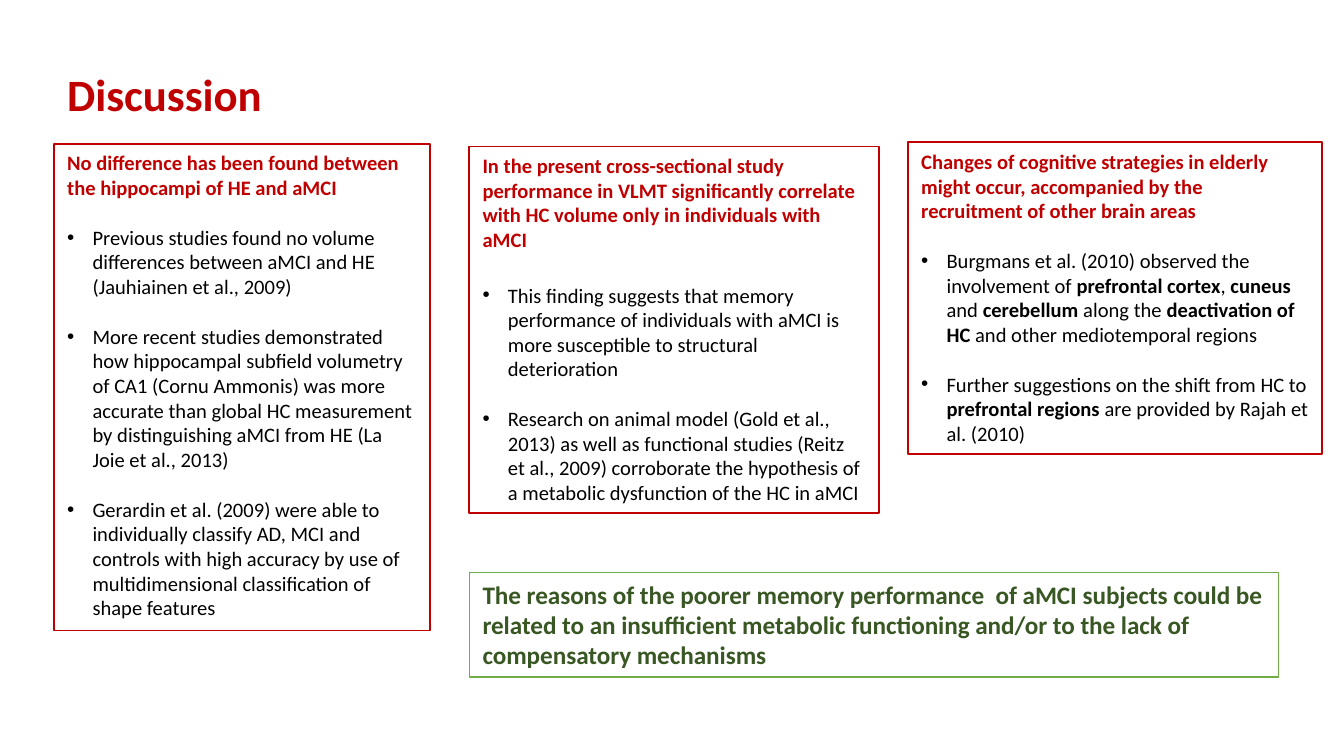
"""Build the discussion slide: three framed columns and a conclusion."""
from lxml.etree import SubElement
from pptx import Presentation
from pptx.dml.color import RGBColor
from pptx.enum.shapes import MSO_SHAPE
from pptx.enum.text import MSO_ANCHOR, PP_ALIGN
from pptx.oxml.ns import qn
from pptx.util import Cm, Pt

COLORS = {
    "red": "C00000",
    "black": "000000",
    "white": "FFFFFF",
    "green": "70AD47",
    "dark": "385723",
}

COLUMNS = [
    {
        "place": (1.02, 2.72, 7.11, 9.2),
        "head": "No difference has been found between the hippocampi of HE and aMCI",
        "gaps": (13.4, 13.4, 13.4),
        "points": [
            "Previous studies found no volume differences between aMCI and HE "
            "(Jauhiainen et al., 2009)",
            "More recent studies demonstrated how hippocampal subfield volumetry of CA1 "
            "(Cornu Ammonis) was more accurate than global HC measurement by "
            "distinguishing aMCI from HE (La Joie et al., 2013)",
            "Gerardin et al. (2009) were able to individually classify AD, MCI and "
            "controls with high accuracy by use of multidimensional classification of "
            "shape features",
        ],
    },
    {
        "place": (8.87, 2.77, 7.75, 6.93),
        "head": "In the present cross-sectional study performance in VLMT significantly "
        "correlate with HC volume only in individuals with aMCI",
        "gaps": (16.5, 13.4),
        "points": [
            "This finding suggests that memory performance of individuals with aMCI is "
            "more susceptible to structural deterioration",
            "Research on animal model (Gold et al., 2013) as well as functional studies "
            "(Reitz et al., 2009) corroborate the hypothesis of a metabolic dysfunction "
            "of the HC in aMCI",
        ],
    },
    {
        "place": (17.16, 2.69, 7.83, 5.89),
        "head": "Changes of cognitive strategies in elderly might occur, accompanied by "
        "the recruitment of other brain areas",
        "gaps": (13.4, 13.4),
        "points": [
            "Burgmans et al. (2010) observed the involvement of *prefrontal cortex*, "
            "*cuneus* and *cerebellum* along the *deactivation of HC* and other "
            "mediotemporal regions",
            "Further suggestions on the shift from HC to *prefrontal regions* are "
            "provided by Rajah et al. (2010)",
        ],
    },
]


def shade(name):
    """Return the named colour."""
    return RGBColor.from_string(COLORS[name])


def prepare(frame):
    """Set wrapping and top alignment of a text frame."""
    frame.word_wrap = True
    frame.vertical_anchor = MSO_ANCHOR.TOP


def add_frame(slide, place, line, width, fill=None):
    """Draw an outlined rectangle and return its text frame."""
    box = slide.shapes.add_shape(MSO_SHAPE.RECTANGLE, *map(Cm, place))
    box.shadow.inherit = False
    if fill:
        box.fill.solid()
        box.fill.fore_color.rgb = shade(fill)
    else:
        box.fill.background()
    box.line.color.rgb = shade(line)
    box.line.width = Pt(width)
    prepare(box.text_frame)
    return box.text_frame


def write(frame, text, size=11, color="black", bold=False, gap=0, bullet=False):
    """Add a paragraph in which *starred* words switch the weight."""
    first = frame.paragraphs[0]
    para = frame.add_paragraph() if first.runs else first
    para.alignment = PP_ALIGN.LEFT
    if gap:
        para.space_before = Pt(gap)
    if bullet:
        props = para._p.get_or_add_pPr()
        props.set("marL", str(Cm(0.48)))
        props.set("indent", str(-Cm(0.48)))
        SubElement(props, qn("a:buFont")).set("typeface", "Arial")
        SubElement(props, qn("a:buChar")).set("char", "•")
    for index, part in enumerate(text.split("*")):
        run = para.add_run()
        run.text = part
        run.font.name = "Calibri"
        run.font.size = Pt(size)
        run.font.bold = bold != (index % 2 == 1)
        run.font.color.rgb = shade(color)


def add_title(slide, text):
    """Add the slide title."""
    frame = slide.shapes.add_textbox(Cm(1.02), Cm(1.14), Cm(11.84), Cm(1.27)).text_frame
    prepare(frame)
    write(frame, text, size=24, color="red", bold=True)


def add_column(slide, place, head, gaps, points):
    """Add a framed column with a heading and bullets."""
    frame = add_frame(slide, place, "red", 1, fill="white")
    write(frame, head, color="red", bold=True)
    for gap, point in zip(gaps, points):
        write(frame, point, gap=gap, bullet=True)


def main():
    """Build and save the slide."""
    deck = Presentation()
    deck.slide_width, deck.slide_height = Cm(25.4), Cm(14.29)
    slide = deck.slides.add_slide(deck.slide_layouts[6])
    for column in COLUMNS:
        add_column(slide, **column)
    frame = add_frame(slide, (8.87, 10.82, 15.29, 1.98), "green", 0.75)
    write(
        frame,
        "The reasons of the poorer memory performance  of aMCI subjects could be related "
        "to an insufficient metabolic functioning and/or to the lack of compensatory "
        "mechanisms",
        size=13.5, color="dark", bold=True,
    )
    add_title(slide, "Discussion")
    deck.save("out.pptx")


if __name__ == "__main__":
    main()
